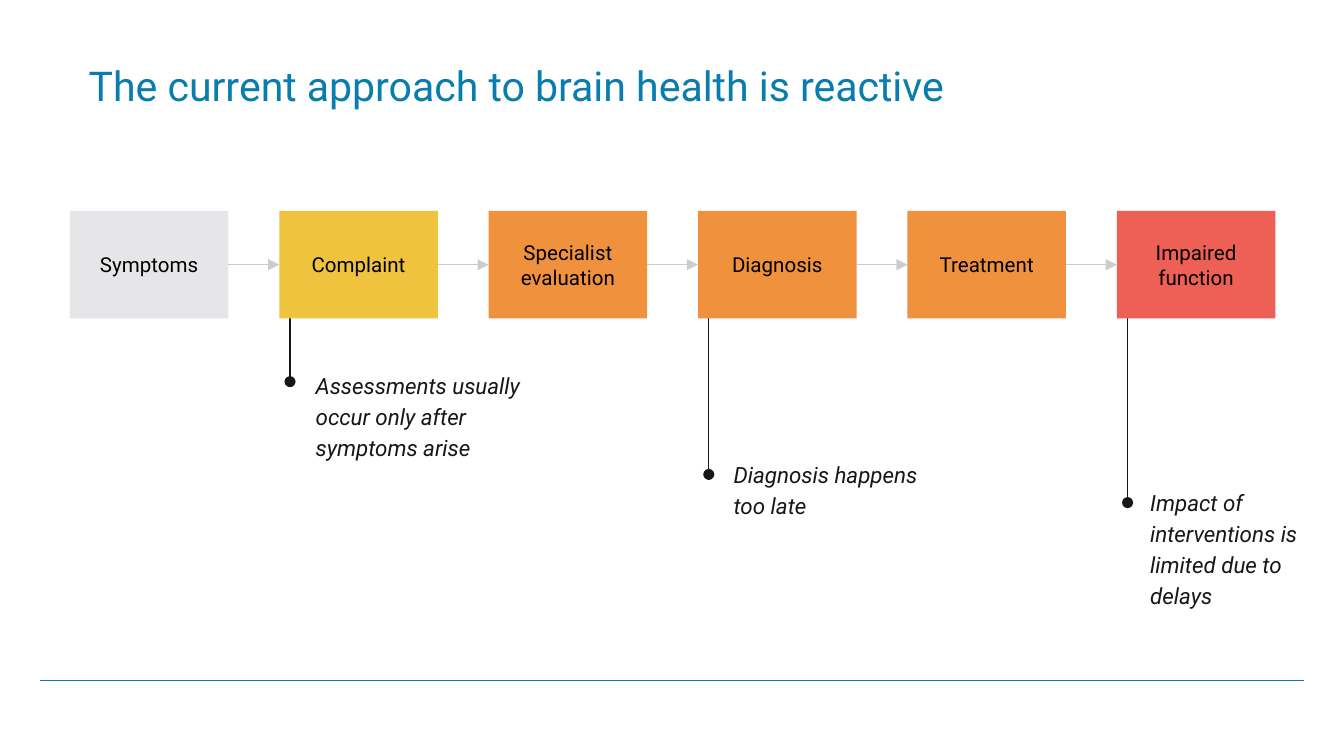
from dataclasses import dataclass

from lxml import etree
from pptx import Presentation
from pptx import util as u
from pptx.dml import color
from pptx.enum import shapes, text
from pptx.oxml import ns

COLORS = {
    "title": "087DAE",
    "ink": "171618",
    "label": "000000",
    "arrow": "CCCCCC",
    "grey": "E6E6E8",
    "yellow": "F0C33E",
    "orange": "F0913E",
    "red": "EE6055",
}
FONT = "Roboto"
WIDTH, HEIGHT = 10, 5.625
BOX_WIDTH, BOX_HEIGHT = 1.18, 0.8
FIRST_LEFT, LAST_LEFT, ROW_TOP = 0.52, 8.31, 1.57
ROW_BOTTOM = ROW_TOP + BOX_HEIGHT
STEM_OFFSET = 0.08


@dataclass
class Step:
    label: str
    fill: str


@dataclass
class Callout:
    words: str
    column: int
    stem_end: float
    left: float
    top: float
    width: float
    height: float
    inset: float = 0.1


STEPS = [
    Step("Symptoms", "grey"),
    Step("Complaint", "yellow"),
    Step("Specialist evaluation", "orange"),
    Step("Diagnosis", "orange"),
    Step("Treatment", "orange"),
    Step("Impaired function", "red"),
]
PITCH = (LAST_LEFT - FIRST_LEFT) / (len(STEPS) - 1)
CALLOUTS = [
    Callout("Assessments usually occur only after symptoms arise",
            1, 2.84, 2.25, 2.64, 1.81, 0.87),
    Callout("Diagnosis happens too late", 3, 3.53, 5.36, 3.3, 1.68, 0.64),
    Callout("Impact of interventions is limited due to delays",
            5, 3.74, 8.46, 3.56, 1.34, 1.32, 0.05),
]


def rgb(name: str) -> color.RGBColor:
    return color.RGBColor.from_string(COLORS[name])


def column_left(column: int) -> float:
    return FIRST_LEFT + column * PITCH


def write(shape, words: str, size: float, ink: str, inset: float,
          anchor=text.MSO_ANCHOR.TOP, align=text.PP_ALIGN.LEFT):
    frame = shape.text_frame
    frame.word_wrap = True
    frame.auto_size = text.MSO_AUTO_SIZE.NONE
    frame.vertical_anchor = anchor
    frame.margin_left = frame.margin_right = u.Inches(0.1)
    frame.margin_top = frame.margin_bottom = u.Inches(inset)
    frame.text = words
    paragraph = frame.paragraphs[0]
    paragraph.alignment = align
    paragraph.font.name = FONT
    paragraph.font.size = u.Pt(size)
    paragraph.font.color.rgb = rgb(ink)
    return paragraph


def draw_line(slide, start: tuple, end: tuple, ink: str, tail: str = "none"):
    line = slide.shapes.add_connector(
        shapes.MSO_CONNECTOR.STRAIGHT, *map(u.Inches, start + end))
    line.line.color.rgb = rgb(ink)
    line.line.width = u.Pt(0.75)
    etree.SubElement(line.line._get_or_add_ln(), ns.qn("a:tailEnd"), type=tail)
    etree.SubElement(line._element.spPr, ns.qn("a:effectLst"))
    return line


def draw_title(slide, words: str) -> None:
    title = slide.shapes.title
    title.left, title.top = u.Inches(0.56), u.Inches(0.4)
    title.width, title.height = u.Inches(9), u.Inches(0.84)
    write(title, words, 22, "title", 0.05)


def draw_step(slide, step: Step, column: int):
    box = slide.shapes.add_shape(
        shapes.MSO_SHAPE.RECTANGLE, u.Inches(column_left(column)),
        u.Inches(ROW_TOP), u.Inches(BOX_WIDTH), u.Inches(BOX_HEIGHT))
    box.shadow.inherit = False
    box.fill.solid()
    box.fill.fore_color.rgb = rgb(step.fill)
    box.line.fill.background()
    write(box, step.label, 11, "label", 0.1,
          text.MSO_ANCHOR.MIDDLE, text.PP_ALIGN.CENTER)
    return box


def draw_arrow(slide, source, target) -> None:
    middle = ROW_TOP + BOX_HEIGHT / 2
    arrow = draw_line(slide, (source.left.inches + BOX_WIDTH, middle),
                      (target.left.inches, middle), "arrow", "triangle")
    arrow.begin_connect(source, 3)
    arrow.end_connect(target, 1)


def draw_callout(slide, callout: Callout) -> None:
    stem = column_left(callout.column) + STEM_OFFSET
    draw_line(slide, (stem, ROW_BOTTOM), (stem, callout.stem_end), "ink", "oval")
    box = slide.shapes.add_textbox(*map(
        u.Inches, (callout.left, callout.top, callout.width, callout.height)))
    paragraph = write(box, callout.words, 12, "ink", callout.inset)
    paragraph.line_spacing = 1.15
    paragraph.font.italic = True


def main() -> None:
    presentation = Presentation()
    presentation.slide_width = u.Inches(WIDTH)
    presentation.slide_height = u.Inches(HEIGHT)
    slide = presentation.slides.add_slide(presentation.slide_layouts[5])
    draw_line(slide, (WIDTH * 0.03, HEIGHT * 0.9),
              (WIDTH * 0.97, HEIGHT * 0.9), "title")
    draw_title(slide, "The current approach to brain health is reactive")
    for callout in CALLOUTS:
        draw_callout(slide, callout)
    boxes = [draw_step(slide, step, column) for column, step in enumerate(STEPS)]
    for source, target in zip(boxes, boxes[1:]):
        draw_arrow(slide, source, target)
    presentation.save("out.pptx")


if __name__ == "__main__":
    main()
